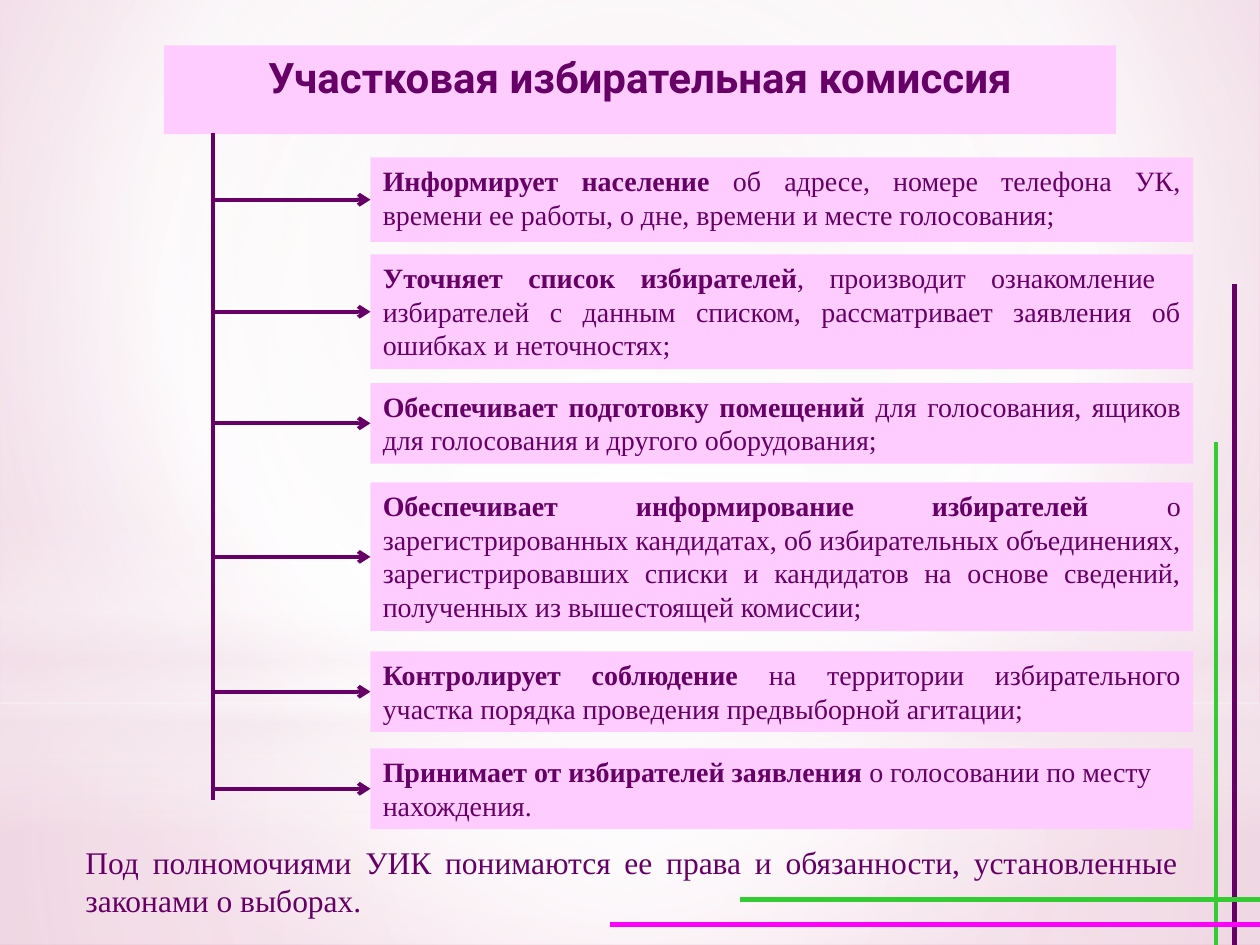
from typing import NamedTuple

from lxml.etree import SubElement
from pptx import Presentation
from pptx.dml.color import RGBColor
from pptx.enum.shapes import MSO_CONNECTOR, MSO_SHAPE
from pptx.enum.text import MSO_ANCHOR, PP_ALIGN
from pptx.oxml.ns import qn
from pptx.util import Inches, Pt

PLUM = RGBColor(0x66, 0x00, 0x66)
PINK = RGBColor(0xFF, 0xCC, 0xFF)
GREEN = RGBColor(0x33, 0xCC, 0x33)
MAGENTA = RGBColor(0xFF, 0x00, 0xFF)
WHITE = RGBColor(0xFF, 0xFF, 0xFF)
MIST = RGBColor(0xF4, 0xE7, 0xED)
BLUSH = RGBColor(0xED, 0xDA, 0xE2)
ROSE = RGBColor(0xE0, 0x9D, 0xBC)

HEADING_FONT, BODY_FONT = "Roboto", "Times New Roman"
CENTRE = (50, 50, 50, 50)

# Top and height in percent of the diagram, bold lead, remaining text, alignment
DUTIES = [
    (3.44, 12.14, "Информирует население ",
     "об адресе, номере телефона УК, времени ее работы, о дне, времени "
     "и месте голосования;", PP_ALIGN.JUSTIFY),
    (17.39, 16.49, "Уточняет список избирателей",
     ", производит ознакомление  избирателей с данным списком, "
     "рассматривает заявления об ошибках и неточностях;", PP_ALIGN.JUSTIFY),
    (35.87, 11.59, "Обеспечивает подготовку помещений ",
     "для голосования, ящиков для голосования и другого оборудования;",
     PP_ALIGN.JUSTIFY),
    (50.18, 21.38, "Обеспечивает информирование избирателей",
     " о зарегистрированных кандидатах, об избирательных объединениях, "
     "зарегистрировавших списки и кандидатов на основе сведений, "
     "полученных из вышестоящей комиссии;", PP_ALIGN.JUSTIFY),
    (74.46, 11.59, "Контролирует соблюдение ",
     "на территории избирательного участка порядка проведения "
     "предвыборной агитации;", PP_ALIGN.JUSTIFY),
    (88.41, 11.59, "Принимает от избирателей заявления ",
     "о голосовании по месту нахождения.", PP_ALIGN.LEFT),
]


class Box(NamedTuple):
    left: int
    top: int
    width: int
    height: int

    def point(self, x, y):
        """Position at x and y percent of the box."""
        return (round(self.left + self.width * x / 100),
                round(self.top + self.height * y / 100))

    def inner(self, x, y, width, height):
        """Inner box given in percent of this one."""
        return Box(*self.point(x, y), round(self.width * width / 100),
                   round(self.height * height / 100))


def set_gradient(fill, owner, stops, centre=None):
    """Fill with (position, colour, opacity) stops, radial if centre is given."""
    fill.gradient()
    gradient = owner.find(".//" + qn("a:gradFill"))
    for child in list(gradient):
        gradient.remove(child)
    stop_list = SubElement(gradient, qn("a:gsLst"))
    for position, colour, opacity in stops:
        stop = SubElement(stop_list, qn("a:gs"), pos=str(position * 1000))
        tint = SubElement(stop, qn("a:srgbClr"), val=str(colour))
        if opacity < 100:
            SubElement(tint, qn("a:alpha"), val=str(opacity * 1000))
    if centre:
        radial = SubElement(gradient, qn("a:path"), path="circle")
        SubElement(radial, qn("a:fillToRect"),
                   {side: str(share * 1000) for side, share in zip("ltrb", centre)})
    else:
        SubElement(gradient, qn("a:lin"), ang="5400000", scaled="0")


def add_panel(slide, box, kind=MSO_SHAPE.RECTANGLE):
    panel = slide.shapes.add_shape(kind, *box)
    panel.shadow.inherit = False
    panel.line.fill.background()
    return panel


def add_line(slide, start, end, colour, width, arrow=False):
    line = slide.shapes.add_connector(MSO_CONNECTOR.STRAIGHT, *start, *end)
    line.line.color.rgb = colour
    line.line.width = Pt(width)
    SubElement(line._element.spPr, qn("a:effectLst"))
    if arrow:
        SubElement(line.line._get_or_add_ln(), qn("a:tailEnd"), type="arrow")


def write(shape, runs, font_name, size, align):
    """Write one paragraph of (text, bold) runs."""
    frame = shape.text_frame
    frame.word_wrap = True
    frame.vertical_anchor = MSO_ANCHOR.TOP
    paragraph = frame.paragraphs[0]
    paragraph.alignment = align
    paragraph.font.name = font_name
    paragraph.font.size = Pt(size)
    paragraph.font.color.rgb = PLUM
    for text, bold in runs:
        run = paragraph.add_run()
        run.text = text
        run.font.bold = bold


def add_text_panel(slide, box, *text_style):
    panel = add_panel(slide, box)
    panel.fill.solid()
    panel.fill.fore_color.rgb = PINK
    write(panel, *text_style)


def add_backdrop(slide, page):
    set_gradient(slide.background.fill, slide._element,
                 [(0, BLUSH, 100), (60, WHITE, 100), (100, ROSE, 100)],
                 (20, 10, 20, 60))
    rectangle = MSO_SHAPE.RECTANGLE
    layers = [
        (rectangle, (0, 74.4, 100, 25.6),
         [(0, WHITE, 91), (37, WHITE, 76), (100, MIST, 79)], CENTRE),
        (rectangle, (0, 0, 100, 74.4),
         [(0, WHITE, 89), (48, WHITE, 62), (100, MIST, 79)], CENTRE),
        (rectangle, (0, 54.93, 100, 33.33),
         [(0, WHITE, 0), (29, WHITE, 30), (45, MIST, 40), (55, WHITE, 26),
          (65, MIST, 60), (100, WHITE, 0)], None),
        (MSO_SHAPE.OVAL, (0, 23.33, 100, 74.4),
         [(0, WHITE, 100), (56, WHITE, 0)], CENTRE),
    ]
    for kind, area, stops, centre in layers:
        layer = add_panel(slide, page.inner(*area), kind)
        set_gradient(layer.fill, layer._element, stops, centre)


def add_duties(slide, box):
    """Trunk on the left edge with an arrow to the middle of each duty."""
    column = 16.07
    for top, height, lead, rest, align in DUTIES:
        add_text_panel(slide, box.inner(column, top, 100 - column, height),
                       [(lead, True), (rest, False)], BODY_FONT, 16, align)
    add_line(slide, box.point(0, 0), box.point(0, 95.83), PLUM, 2.25)
    for top, height, *_ in DUTIES:
        middle = top + height / 2
        add_line(slide, box.point(0, middle), box.point(column, middle),
                 PLUM, 2.25, arrow=True)


def add_summary(slide, box):
    summary = slide.shapes.add_textbox(*box)
    write(summary, [("Под полномочиями УИК понимаются ее права и обязанности, "
                     "установленные законами о выборах.", False)],
          BODY_FONT, 18, PP_ALIGN.JUSTIFY)


def add_corner_lines(slide, page):
    for start, end, colour, width in [
        ((96.5, 46.8), (96.5, 100), GREEN, 2.25),
        ((98, 30), (98, 100), PLUM, 3),
        ((58.7, 95.2), (100, 95.2), GREEN, 3),
        ((48.4, 97.87), (100, 97.87), MAGENTA, 3),
    ]:
        add_line(slide, page.point(*start), page.point(*end), colour, width)


def main():
    deck = Presentation()
    deck.slide_width, deck.slide_height = Inches(10), Inches(7.5)
    slide = deck.slides.add_slide(deck.slide_layouts[6])
    page = Box(0, 0, deck.slide_width, deck.slide_height)
    add_backdrop(slide, page)
    add_text_panel(slide, page.inner(13, 4.8, 75.6, 9.4),
                   [("Участковая избирательная комиссия", True)],
                   HEADING_FONT, 24, PP_ALIGN.CENTER)
    add_duties(slide, page.inner(16.9, 14.13, 77.8, 73.6))
    add_summary(slide, page.inner(5.8, 88.53, 88.7, 9.47))
    add_corner_lines(slide, page)
    deck.save("out.pptx")


if __name__ == "__main__":
    main()
